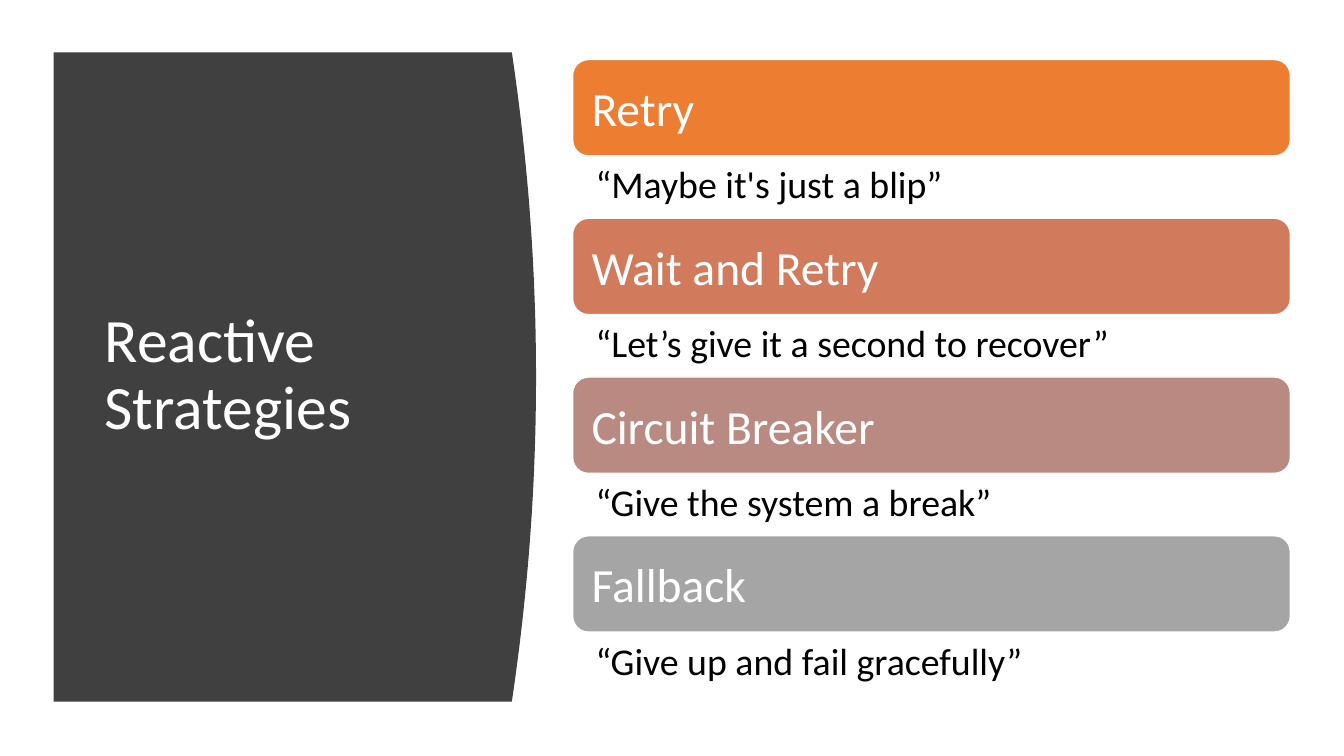
"""Build the Reactive Strategies slide: a curved title panel beside four strategy cards."""
from pptx import Presentation
from pptx import util as u
from pptx.dml.color import RGBColor
from pptx.enum import shapes, text

WHITE = RGBColor(0xFF, 0xFF, 0xFF)
BLACK = RGBColor(0x00, 0x00, 0x00)
CHARCOAL = RGBColor(0x40, 0x40, 0x40)
ORANGE = RGBColor(0xED, 0x7D, 0x31)
TERRACOTTA = RGBColor(0xD1, 0x7B, 0x5C)
DUSTY_ROSE = RGBColor(0xB9, 0x8A, 0x82)
GREY = RGBColor(0xA5, 0xA5, 0xA5)

TITLE = "Reactive Strategies"
STRATEGIES = [
    ("Retry", "“Maybe it's just a blip”", ORANGE),
    ("Wait and Retry", "“Let’s give it a second to recover”", TERRACOTTA),
    ("Circuit Breaker", "“Give the system a break”", DUSTY_ROSE),
    ("Fallback", "“Give up and fail gracefully”", GREY),
]

FONT = "Calibri"
PANEL_LEFT, PANEL_TOP, PANEL_RIGHT, PANEL_HEIGHT = 1.35, 1.32, 12.9, 16.36
PANEL_BULGE, CURVE_STEPS = 0.61, 48
CARD_LEFT, CARD_TOP, CARD_WIDTH, CARD_HEIGHT = 14.43, 1.5, 18.09, 2.43
CARD_PITCH = 4


def write(holder, words, *, size, color, inset, anchor, line_spacing=1.0):
    frame = holder.text_frame
    frame.word_wrap = True
    frame.vertical_anchor = anchor
    frame.margin_left = frame.margin_right = u.Cm(inset)
    frame.margin_top = frame.margin_bottom = u.Cm(0.13)
    paragraph = frame.paragraphs[0]
    paragraph.alignment = text.PP_ALIGN.LEFT
    paragraph.line_spacing = line_spacing
    run = paragraph.add_run()
    run.text = words
    run.font.name = FONT
    run.font.size = u.Pt(size)
    run.font.color.rgb = color


def draw_panel(slide):
    curve = []
    for step in range(CURVE_STEPS + 1):
        along = step / CURVE_STEPS
        x = PANEL_RIGHT + PANEL_BULGE * 4 * along * (1 - along)
        curve.append((u.Cm(x), u.Cm(PANEL_TOP + PANEL_HEIGHT * along)))
    outline = slide.shapes.build_freeform(u.Cm(PANEL_LEFT), u.Cm(PANEL_TOP))
    bottom_left = (u.Cm(PANEL_LEFT), u.Cm(PANEL_TOP + PANEL_HEIGHT))
    outline.add_line_segments(curve + [bottom_left], close=True)
    panel = outline.convert_to_shape()
    panel.shadow.inherit = False
    panel.fill.solid()
    panel.fill.fore_color.rgb = CHARCOAL
    panel.line.fill.background()

    title = slide.shapes.add_textbox(u.Cm(2.39), u.Cm(2.82), u.Cm(9.5), u.Cm(13.31))
    write(title, TITLE, size=44, color=WHITE, inset=0.25,
          anchor=text.MSO_ANCHOR.MIDDLE, line_spacing=0.9)


def draw_strategy(slide, top, name, quote, color):
    card = slide.shapes.add_shape(
        shapes.MSO_SHAPE.ROUNDED_RECTANGLE,
        u.Cm(CARD_LEFT), u.Cm(top), u.Cm(CARD_WIDTH), u.Cm(CARD_HEIGHT))
    card.shadow.inherit = False
    card.fill.solid()
    card.fill.fore_color.rgb = color
    card.line.color.rgb = WHITE
    card.line.width = u.Pt(1)
    write(card, name, size=34, color=WHITE, inset=0.36,
          anchor=text.MSO_ANCHOR.MIDDLE)

    saying = slide.shapes.add_textbox(
        u.Cm(CARD_LEFT), u.Cm(top + CARD_HEIGHT),
        u.Cm(CARD_WIDTH), u.Cm(CARD_PITCH - CARD_HEIGHT))
    write(saying, quote, size=27, color=BLACK, inset=0.58,
          anchor=text.MSO_ANCHOR.TOP)


def main():
    deck = Presentation()
    deck.slide_width, deck.slide_height = u.Cm(33.87), u.Cm(19.05)
    slide = deck.slides.add_slide(deck.slide_layouts[6])
    draw_panel(slide)
    for row, (name, quote, color) in enumerate(STRATEGIES):
        draw_strategy(slide, CARD_TOP + row * CARD_PITCH, name, quote, color)
    deck.save("out.pptx")


if __name__ == "__main__":
    main()
